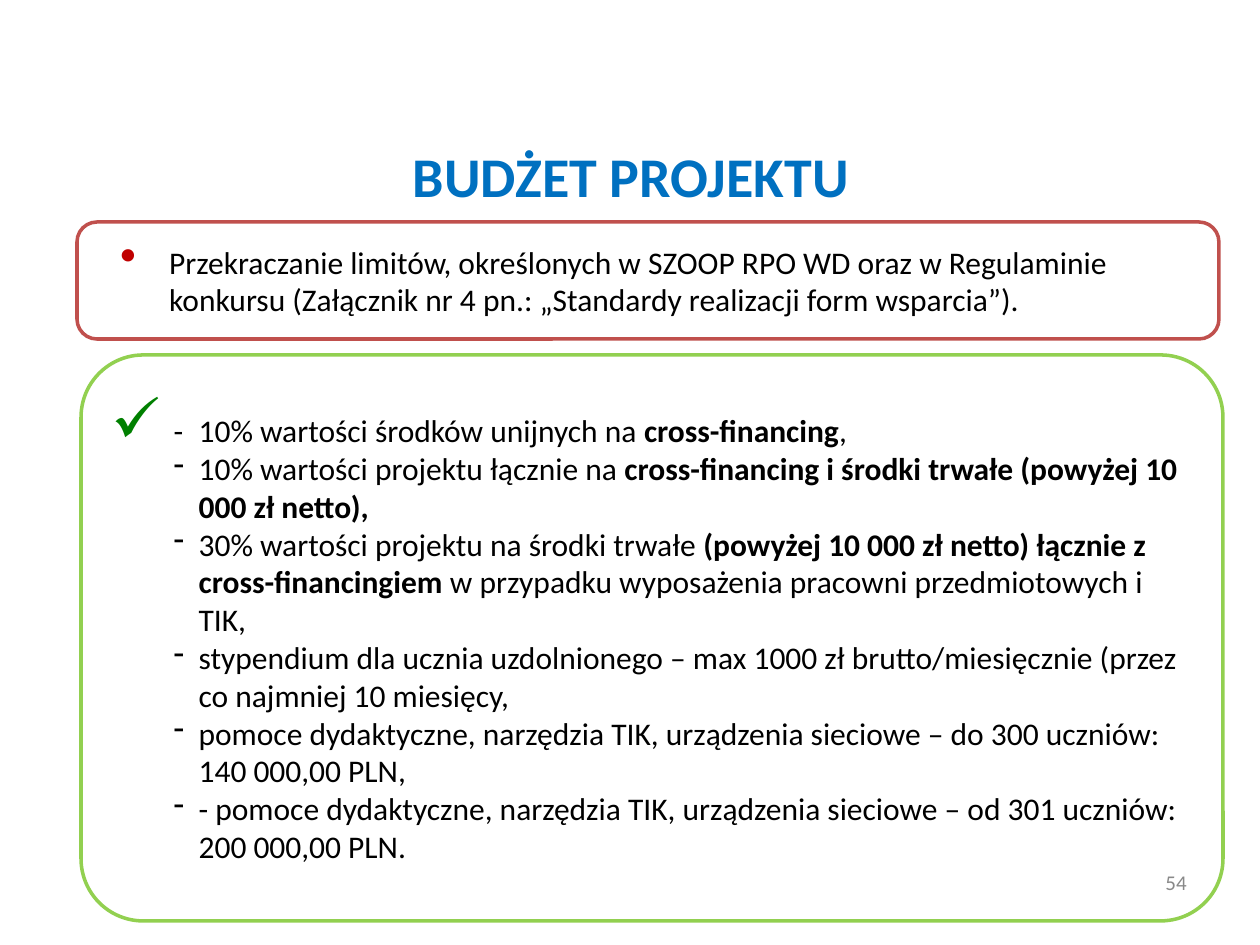
from lxml import etree
from pptx import Presentation
from pptx import util as u
from pptx.dml.color import RGBColor
from pptx.enum import shapes, text
from pptx.oxml.ns import qn

PX = 914400 / 126


def px(length):
    return u.Emu(round(length * PX))


def color(value):
    return RGBColor.from_string(value)


def set_list(paragraph, left, hanging, bullet, tint=None, percent=None, tab=None):
    properties = paragraph._p.get_or_add_pPr()
    properties.set("marL", str(px(left)))
    properties.set("indent", str(px(-hanging)))
    if tint:
        holder = etree.SubElement(properties, qn("a:buClr"))
        etree.SubElement(holder, qn("a:srgbClr"), val=tint)
    if percent:
        etree.SubElement(properties, qn("a:buSzPct"), val=str(percent * 1000))
    etree.SubElement(properties, qn("a:buChar"), char=bullet)
    if tab:
        tabs = etree.SubElement(properties, qn("a:tabLst"))
        etree.SubElement(tabs, qn("a:tab"), pos=str(px(tab)), algn="l")


def write(paragraph, *runs, size=18, tint="000000", bold=False, align="LEFT", bullet=None):
    if bullet:
        set_list(paragraph, **bullet)
    paragraph.alignment = getattr(text.PP_ALIGN, align)
    for index, content in enumerate(runs):
        run = paragraph.add_run()
        run.text = content
        run.font.name = "Calibri"
        run.font.size = u.Pt(size)
        run.font.bold = bold or index % 2 == 1
        run.font.color.rgb = color(tint)


class SlideBuilder:
    def __init__(self, slide):
        self.slide = slide

    def frame(self, shape):
        frame = shape.text_frame
        frame.word_wrap = True
        frame.vertical_anchor = text.MSO_ANCHOR.MIDDLE
        return frame

    def label(self, left, top, width, height, content, **style):
        shape = self.slide.shapes.add_textbox(*map(px, (left, top, width, height)))
        write(self.frame(shape).paragraphs[0], content, **style)

    def panel(self, left, top, width, height, outline, radius, items):
        shape = self.slide.shapes.add_shape(
            shapes.MSO_SHAPE.ROUNDED_RECTANGLE, *map(px, (left, top, width, height)))
        shape.adjustments[0] = radius
        shape.shadow.inherit = False
        shape.fill.background()
        shape.line.color.rgb = color(outline)
        shape.line.width = u.Pt(2)
        frame = self.frame(shape)
        for index, (bullet, *runs) in enumerate(items):
            paragraph = frame.add_paragraph() if index else frame.paragraphs[0]
            write(paragraph, *runs, bullet=bullet)


def main():
    presentation = Presentation()
    presentation.slide_width, presentation.slide_height = px(1260), px(945)
    builder = SlideBuilder(presentation.slides.add_slide(presentation.slide_layouts[6]))

    dot = dict(left=74, hanging=49, bullet="•", tint="C00000", percent=150)
    check = dict(left=62, hanging=62, bullet="✓", tint="008000", percent=200, tab=87)
    dash = dict(left=87, hanging=25, bullet="-")

    builder.label(64, 145, 1134, 60, "BUDŻET PROJEKTU",
                  size=32, tint="0070C0", bold=True, align="CENTER")
    builder.panel(77, 222, 1142, 117, "C0504D", 0.17, [
        (dot, "Przekraczanie limitów, określonych w SZOOP RPO WD oraz w Regulaminie "
              "konkursu (Załącznik nr 4 pn.: „Standardy realizacji form wsparcia”)."),
    ])
    builder.panel(81, 355, 1142, 566, "92D050", 0.11, [
        (check, "-\t10% wartości środków unijnych na ", "cross-financing", ","),
        (dash, "10% wartości projektu łącznie na ",
         "cross-financing i środki trwałe (powyżej 10 000 zł netto),"),
        (dash, "30% wartości projektu na środki trwałe ",
         "(powyżej 10 000 zł netto) łącznie z cross-financingiem",
         " w przypadku wyposażenia pracowni przedmiotowych i TIK,"),
        (dash, "stypendium dla ucznia uzdolnionego – max 1000 zł brutto/miesięcznie "
               "(przez co najmniej 10 miesięcy,"),
        (dash, "pomoce dydaktyczne, narzędzia TIK, urządzenia sieciowe – "
               "do 300 uczniów: 140 000,00 PLN,"),
        (dash, "- pomoce dydaktyczne, narzędzia TIK, urządzenia sieciowe – "
               "od 301 uczniów: 200 000,00 PLN."),
    ])
    builder.label(905, 857, 294, 50, "54", size=12, tint="898989", align="RIGHT")
    presentation.save("out.pptx")


if __name__ == "__main__":
    main()
